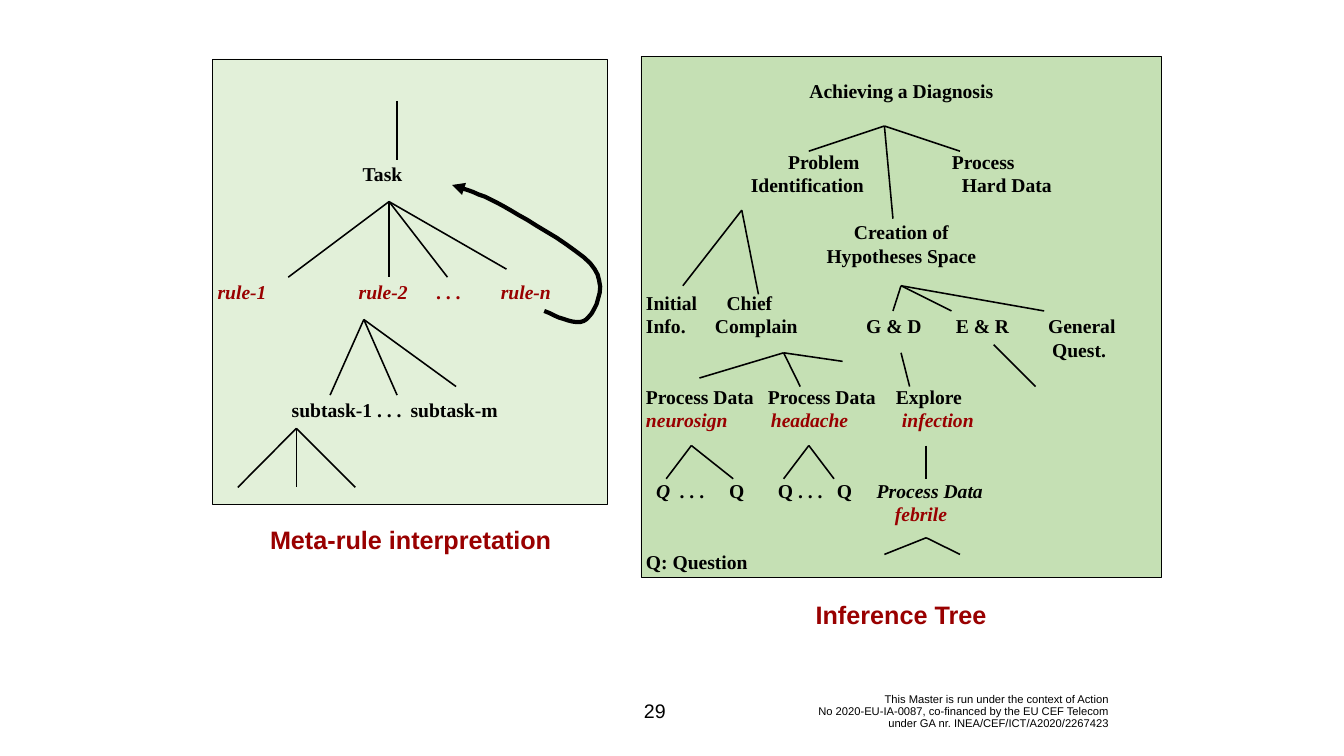
from typing import NamedTuple

from lxml.etree import SubElement
from pptx import Presentation
from pptx.dml.color import RGBColor
from pptx.enum.shapes import MSO_CONNECTOR, MSO_SHAPE
from pptx.enum.text import MSO_ANCHOR, PP_ALIGN
from pptx.oxml.ns import qn
from pptx.util import Emu, Pt

PX = 9144  # EMU per px, 100 px to the inch
LINE = 33.6  # height of a tree text line in points
INSET = 10  # left margin of a panel in px
COLORS = {"ink": "000000", "accent": "990000", "rules": "E2F0D9", "tree": "C5E0B4"}

TREE_FONT = {"name": "Times New Roman", "size": Pt(28), "bold": True}
FORMATS = {
    "node": {**TREE_FONT, "italic": False, "color": "ink"},
    "goal": {**TREE_FONT, "italic": True, "color": "ink"},
    "value": {**TREE_FONT, "italic": True, "color": "accent"},
    "caption": {"name": "Arial", "size": Pt(36), "bold": True, "color": "accent"},
    "number": {"name": "Arial", "size": Pt(28), "color": "ink"},
    "credit": {"name": "Arial", "size": Pt(16), "color": "ink"},
}


class Box(NamedTuple):
    x: int
    y: int
    w: int
    h: int


class Cell(NamedTuple):
    text: str
    x: int = 0  # tab position within the panel
    style: str = "node"


class Row(NamedTuple):
    gap: int  # empty lines above
    cells: list[Cell]
    centred: bool = False


class Panel(NamedTuple):
    box: Box
    fill: str
    top: int  # space above the first row
    rows: list[Row]


class Fan(NamedTuple):
    apex: tuple[int, int]
    tips: list[tuple[int, int]]


class Note(NamedTuple):
    text: str
    box: Box
    style: str
    align: PP_ALIGN = PP_ALIGN.CENTER
    spacing: float = 1.0


PANELS = [
    Panel(Box(422, 117, 783, 883), "rules", 205, [
        Row(0, [Cell("Task", 288)]),
        Row(4, [Cell("rule-1", 0, "value"), Cell("rule-2", 280, "value"),
                Cell(". . .", 435, "value"), Cell("rule-n", 562, "value")]),
        Row(4, [Cell("subtask-1 . . .", 147), Cell("subtask-m", 383)]),
    ]),
    Panel(Box(1272, 112, 1033, 1033), "tree", 45, [
        Row(0, [Cell("Achieving a Diagnosis")], True),
        Row(2, [Cell("Problem", 282), Cell("Process", 607)]),
        Row(0, [Cell("Identification", 208), Cell("Hard Data", 627)]),
        Row(1, [Cell("Creation of")], True),
        Row(0, [Cell("Hypotheses Space")], True),
        Row(1, [Cell("Initial"), Cell("Chief", 160)]),
        Row(0, [Cell("Info."), Cell("Complain", 137), Cell("G & D", 437),
                Cell("E & R", 615), Cell("General", 798)]),
        Row(0, [Cell("Quest.", 806)]),
        Row(1, [Cell("Process Data"), Cell("Process Data", 242), Cell("Explore", 496)]),
        Row(0, [Cell("neurosign", 0, "value"), Cell("headache", 248, "value"),
                Cell("infection", 508, "value")]),
        Row(2, [Cell("Q", 20, "goal"), Cell(". . .", 67), Cell("Q", 165),
                Cell("Q . . .", 262), Cell("Q", 379), Cell("Process Data", 458, "goal")]),
        Row(0, [Cell("febrile", 494, "value")]),
        Row(1, [Cell("Q: Question")]),
    ]),
]

FANS = [
    # Meta-rule interpretation
    Fan((788, 200), [(788, 317)]),
    Fan((772, 400), [(572, 550), (772, 550), (888, 550), (1005, 534)]),
    Fan((722, 634), [(655, 784), (788, 784), (905, 767)]),
    Fan((588, 850), [(472, 967), (588, 967), (705, 967)]),
    # Inference tree
    Fan((1755, 250), [(1605, 300), (1772, 434), (1905, 300)]),
    Fan((1472, 417), [(1355, 567), (1505, 584)]),
    Fan((1788, 567), [(1772, 617), (1888, 617), (2072, 617)]),
    Fan((1555, 700), [(1388, 750), (1588, 767), (1672, 717)]),
    Fan((1788, 700), [(1805, 767)]),
    Fan((1972, 684), [(2055, 767)]),
    Fan((1372, 884), [(1322, 950), (1455, 950)]),
    Fan((1605, 884), [(1555, 950), (1655, 950)]),
    Fan((1838, 884), [(1838, 950)]),
    Fan((1838, 1067), [(1755, 1100), (1905, 1100)]),
]

# Start point, then two controls and an end for each Bézier piece
LOOP = [(1080, 617), (1113, 632), (1147, 647), (1163, 634), (1180, 620), (1205, 570),
        (1180, 534), (1155, 497), (1060, 445), (1013, 417), (966, 389), (931, 378), (897, 367)]

NOTES = [
    Note("Meta-rule interpretation", Box(415, 1034, 800, 71), "caption"),
    Note("Inference Tree", Box(1388, 1184, 800, 71), "caption"),
    Note("29", Box(1244, 1370, 111, 80), "number"),
    Note("This Master is run under the context of Action\n"
         "No 2020-EU-IA-0087, co-financed by the EU CEF Telecom\n"
         "under GA nr. INEA/CEF/ICT/A2020/2267423",
         Box(1502, 1374, 708, 76), "credit", PP_ALIGN.RIGHT, 0.9),
]


def emu(*lengths: int) -> list[Emu]:
    return [Emu(length * PX) for length in lengths]


def color(name: str) -> RGBColor:
    return RGBColor.from_string(COLORS[name])


def apply_format(font, style: str) -> None:
    for key, value in FORMATS[style].items():
        if key == "color":
            font.color.rgb = color(value)
        else:
            setattr(font, key, value)


def set_line(line, points: float) -> None:
    line.color.rgb = color("ink")
    line.width = Pt(points)


def add_row(paragraph, row: Row) -> None:
    paragraph.alignment = PP_ALIGN.CENTER if row.centred else PP_ALIGN.LEFT
    paragraph.line_spacing = Pt(LINE)
    paragraph.space_before = Pt(row.gap * LINE)
    stops = [cell.x for cell in row.cells if cell.x]
    if stops:
        tabs = SubElement(paragraph._p.get_or_add_pPr(), qn("a:tabLst"))
        for stop in stops:
            SubElement(tabs, qn("a:tab"), pos=str(stop * PX), algn="l")
    for cell in row.cells:
        run = paragraph.add_run()
        run.text = f"\t{cell.text}" if cell.x else cell.text
        apply_format(run.font, cell.style)


def add_panel(shapes, panel: Panel) -> None:
    shape = shapes.add_shape(MSO_SHAPE.RECTANGLE, *emu(*panel.box))
    shape.shadow.inherit = False
    shape.fill.solid()
    shape.fill.fore_color.rgb = color(panel.fill)
    set_line(shape.line, 0.75)
    frame = shape.text_frame
    frame.word_wrap = True
    frame.vertical_anchor = MSO_ANCHOR.TOP
    frame.margin_left, frame.margin_right, frame.margin_top = emu(INSET, INSET, panel.top)
    for index, row in enumerate(panel.rows):
        add_row(frame.add_paragraph() if index else frame.paragraphs[0], row)


def add_fan(shapes, fan: Fan) -> None:
    for tip in fan.tips:
        branch = shapes.add_connector(MSO_CONNECTOR.STRAIGHT, *emu(*fan.apex, *tip))
        set_line(branch.line, 2.25)
        SubElement(branch._element.spPr, qn("a:effectLst"))


def bezier(points: list[tuple[int, int]], t: float) -> tuple[int, int]:
    weights = ((1 - t) ** 3, 3 * t * (1 - t) ** 2, 3 * t**2 * (1 - t), t**3)
    x, y = (round(sum(w * v for w, v in zip(weights, axis))) for axis in zip(*points))
    return x, y


def add_loop(shapes, points: list[tuple[int, int]], steps: int = 10) -> None:
    curve = [bezier(points[start:start + 4], step / steps)
             for start in range(0, len(points) - 1, 3) for step in range(1, steps + 1)]
    builder = shapes.build_freeform(*points[0], scale=PX)
    builder.add_line_segments(curve, close=False)
    loop = builder.convert_to_shape()
    loop.shadow.inherit = False
    loop.fill.background()
    set_line(loop.line, 6)
    SubElement(loop.line._get_or_add_ln(), qn("a:tailEnd"), type="triangle")


def add_note(shapes, note: Note) -> None:
    frame = shapes.add_textbox(*emu(*note.box)).text_frame
    frame.word_wrap = True
    frame.vertical_anchor = MSO_ANCHOR.MIDDLE
    paragraph = frame.paragraphs[0]
    paragraph.text = note.text
    paragraph.alignment = note.align
    paragraph.line_spacing = note.spacing
    for run in paragraph.runs:
        apply_format(run.font, note.style)


def main() -> None:
    deck = Presentation()
    deck.slide_width, deck.slide_height = emu(2667, 1500)
    shapes = deck.slides.add_slide(deck.slide_layouts[6]).shapes
    for panel in PANELS:
        add_panel(shapes, panel)
    for fan in FANS:
        add_fan(shapes, fan)
    add_loop(shapes, LOOP)
    for note in NOTES:
        add_note(shapes, note)
    deck.save("out.pptx")


if __name__ == "__main__":
    main()
